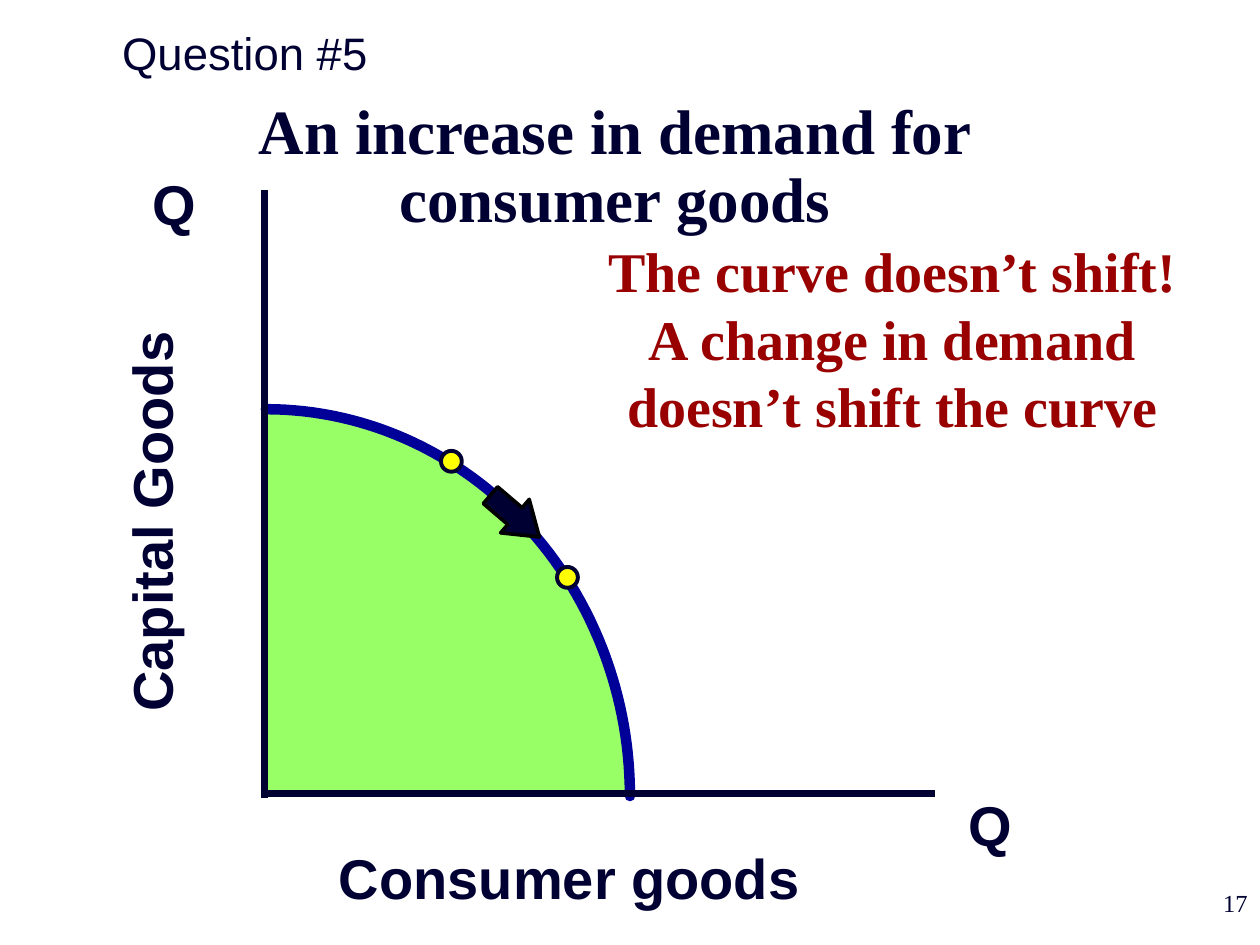
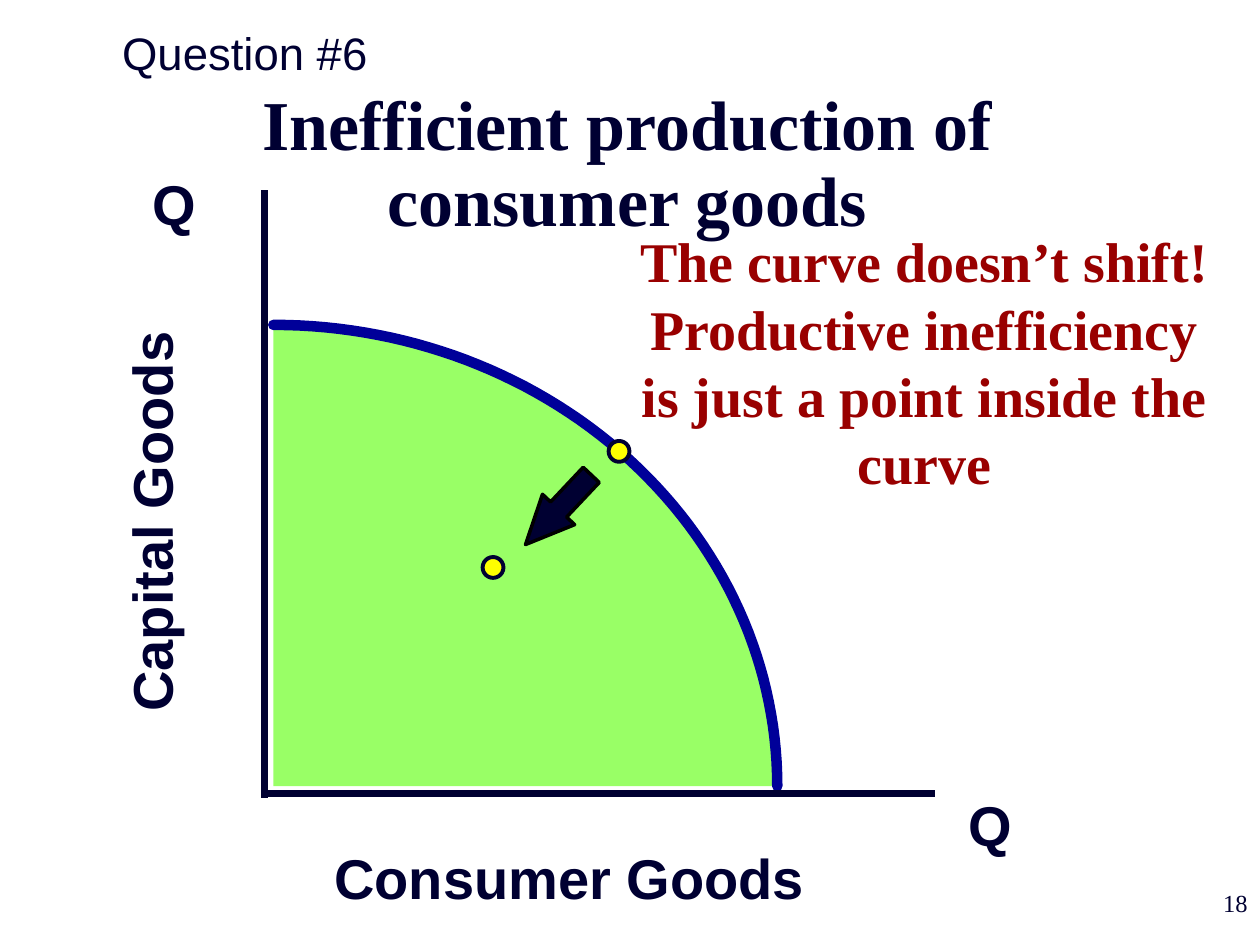
import math
import pptx
import pptx.util
import pptx.dml.color
import pptx.enum.shapes
import pptx.enum.text
import lxml.etree

Cm = pptx.util.Cm
Pt = pptx.util.Pt
SHAPES = pptx.enum.shapes.MSO_SHAPE
ALIGN = pptx.enum.text.PP_ALIGN
COLORS = {
    "ink": "000032",
    "answer": "990000",
    "curve": "000099",
    "area": "99FF66",
    "dot": "FFFF00",
    "outline": "000000",
}
SERIF, SANS = "Times New Roman", "Arial"
DOT_SIZE = 0.42
ARC_STEPS = 60

QUESTIONS = [
    {
        "heading": "Question #5",
        "title": "An increase in demand for consumer goods",
        "title_place": (2.97, 1.9, 18.85, 3.02),
        "title_size": 36,
        "answer": ["The curve doesn’t shift!", "A change in demand doesn’t shift the curve"],
        "answer_place": (11.86, 4.65, 12.27, 4.32),
        "x_label": "Consumer goods",
        "origin": (5.36, 16.05),
        "radii": (7.34, 7.8),
        "arrow_place": (9.73, 9.96, 1.3, 0.89),
        "arrow_angle": 40.5,
        "arrow_head": 0.73,
        "dots": [(11.23, 11.43), (8.89, 9.09)],
        "number": "17",
    },
    {
        "heading": "Question #6",
        "title": "Inefficient production of consumer goods",
        "title_place": (2.89, 1.7, 19.5, 3.33),
        "title_size": 40,
        "answer": ["The curve doesn’t shift!", "Productive inefficiency is just a point inside the curve"],
        "answer_place": (12.5, 4.45, 12.27, 5.74),
        "x_label": "Consumer Goods",
        "origin": (5.51, 15.85),
        "radii": (10.16, 9.3),
        "arrow_place": (10.29, 9.83, 1.93, 0.89),
        "arrow_angle": 133.3,
        "arrow_head": 1.09,
        "dots": [(9.73, 11.23), (12.27, 8.89)],
        "number": "18",
    },
]


def add_text(page, place, lines, size, font=SANS, bold=True, color="ink",
             align=ALIGN.CENTER, spacing=1.0, wrap=True):
    box = page.shapes.add_textbox(*map(Cm, place))
    frame = box.text_frame
    frame.word_wrap = wrap
    frame.text = "\n".join(lines)
    for para in frame.paragraphs:
        para.alignment = align
        para.line_spacing = spacing
        para.font.name = font
        para.font.size = Pt(size)
        para.font.bold = bold
        para.font.color.rgb = pptx.dml.color.RGBColor.from_string(COLORS[color])
    return box


def paint(shape, fill=None, line=None, width=0):
    shape.shadow.inherit = False
    if fill:
        shape.fill.solid()
        shape.fill.fore_color.rgb = pptx.dml.color.RGBColor.from_string(COLORS[fill])
    else:
        shape.fill.background()
    if line:
        shape.line.color.rgb = pptx.dml.color.RGBColor.from_string(COLORS[line])
        shape.line.width = Pt(width)
    else:
        shape.line.fill.background()


deck = pptx.Presentation()
deck.slide_width, deck.slide_height = Cm(25.4), Cm(19.05)

for question in QUESTIONS:
    page = deck.slides.add_slide(deck.slide_layouts[6])

    origin_x, origin_y = question["origin"]
    radius_x, radius_y = question["radii"]
    arc = []
    for step in range(ARC_STEPS + 1):
        angle = math.pi / 2 * step / ARC_STEPS
        arc.append((Cm(origin_x + radius_x * math.sin(angle)),
                    Cm(origin_y - radius_y * math.cos(angle))))

    area_builder = page.shapes.build_freeform(*arc[0])
    area_builder.add_line_segments(arc[1:] + [(Cm(origin_x), Cm(origin_y))], close=True)
    paint(area_builder.convert_to_shape(), fill="area")
    curve_builder = page.shapes.build_freeform(*arc[0])
    curve_builder.add_line_segments(arc[1:], close=False)
    curve = curve_builder.convert_to_shape()
    paint(curve, line="curve", width=6)
    curve.line._get_or_add_ln().set("cap", "rnd")

    add_text(page, question["title_place"], [question["title"]],
             question["title_size"], font=SERIF, spacing=0.9)

    for ends in [(5.33, 3.84, 5.33, 16.08), (5.31, 16, 18.85, 16)]:
        axis = page.shapes.add_connector(
            pptx.enum.shapes.MSO_CONNECTOR.STRAIGHT, *map(Cm, ends))
        axis.line.color.rgb = pptx.dml.color.RGBColor.from_string(COLORS["ink"])
        axis.line.width = Pt(4)
        lxml.etree.SubElement(axis._element.spPr, pptx.oxml.ns.qn("a:effectLst"))

    for left, top in [(2.82, 3.3), (19.28, 15.82)]:
        add_text(page, (left, top, 1.37, 1.6), ["Q"], 32, align=ALIGN.LEFT, wrap=False)
    y_label = add_text(page, (-1.07, 9.7, 8.23, 1.63), ["Capital Goods"], 32, wrap=False)
    y_label.rotation = 270
    add_text(page, (5.98, 16.87, 11, 1.63), [question["x_label"]], 32, wrap=False)

    arrow = page.shapes.add_shape(SHAPES.RIGHT_ARROW, *map(Cm, question["arrow_place"]))
    arrow.rotation = question["arrow_angle"]
    arrow.adjustments[1] = question["arrow_head"]
    paint(arrow, fill="ink", line="outline", width=2)

    for left, top in question["dots"]:
        dot = page.shapes.add_shape(
            SHAPES.OVAL, Cm(left), Cm(top), Cm(DOT_SIZE), Cm(DOT_SIZE))
        paint(dot, fill="dot", line="ink", width=2.25)

    add_text(page, question["answer_place"], question["answer"], 32,
             font=SERIF, color="answer")
    add_text(page, (0.94, 0.38, 8, 1.37), [question["heading"]], 26, bold=False)
    add_text(page, (20.12, 17.78, 5.28, 1.27), [question["number"]], 14,
             font=SERIF, bold=False, align=ALIGN.RIGHT)

deck.save("out.pptx")
